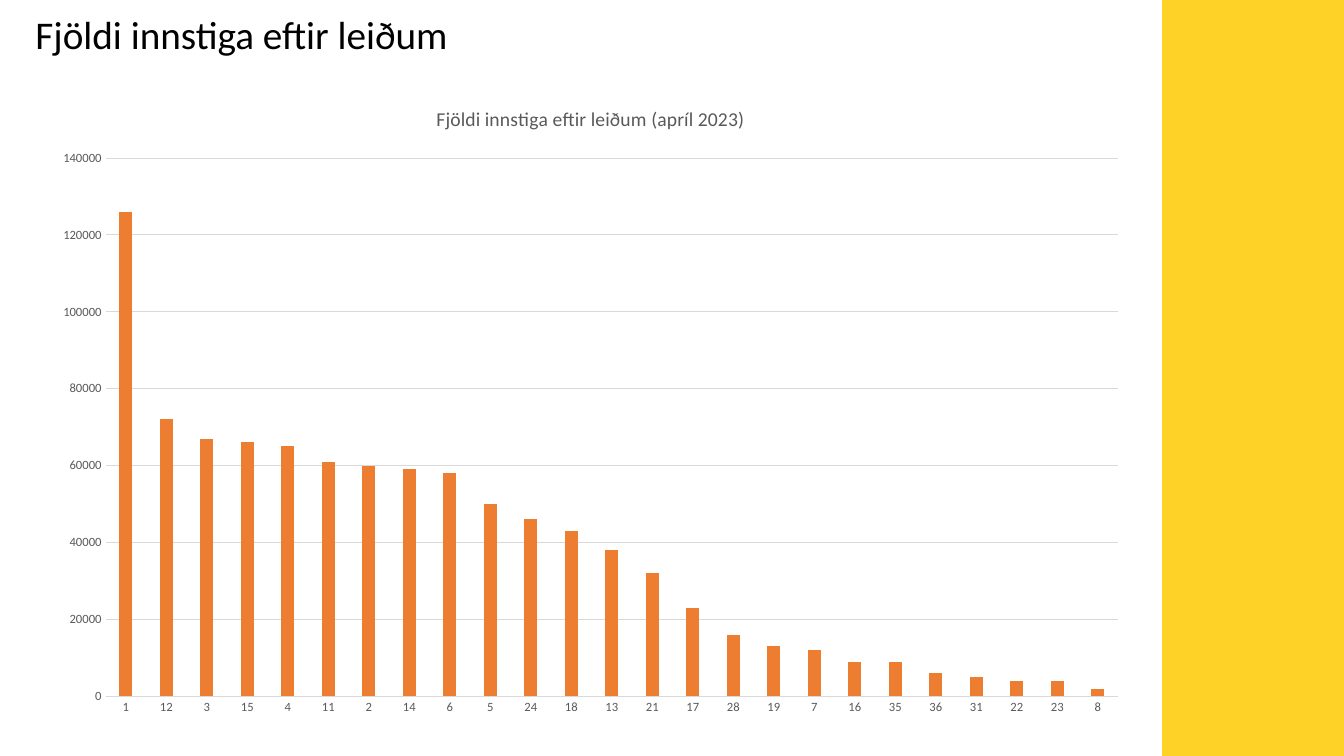
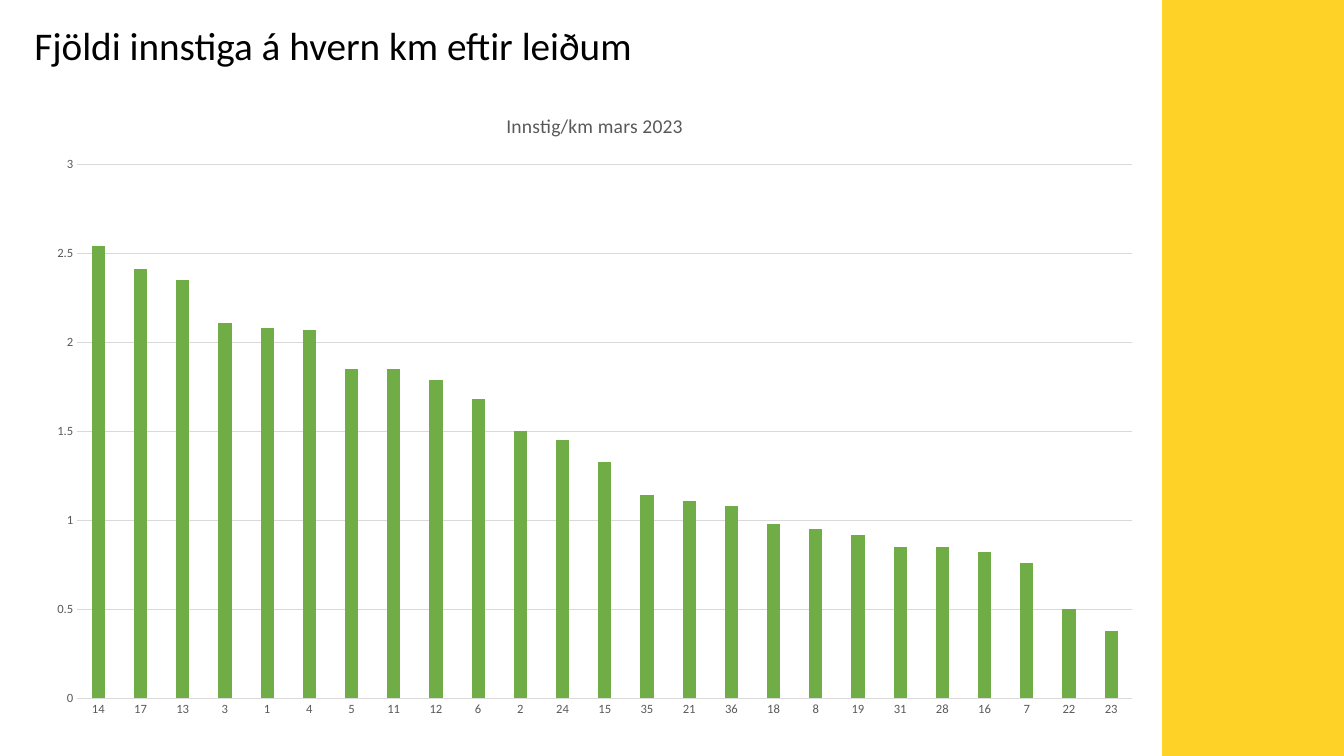
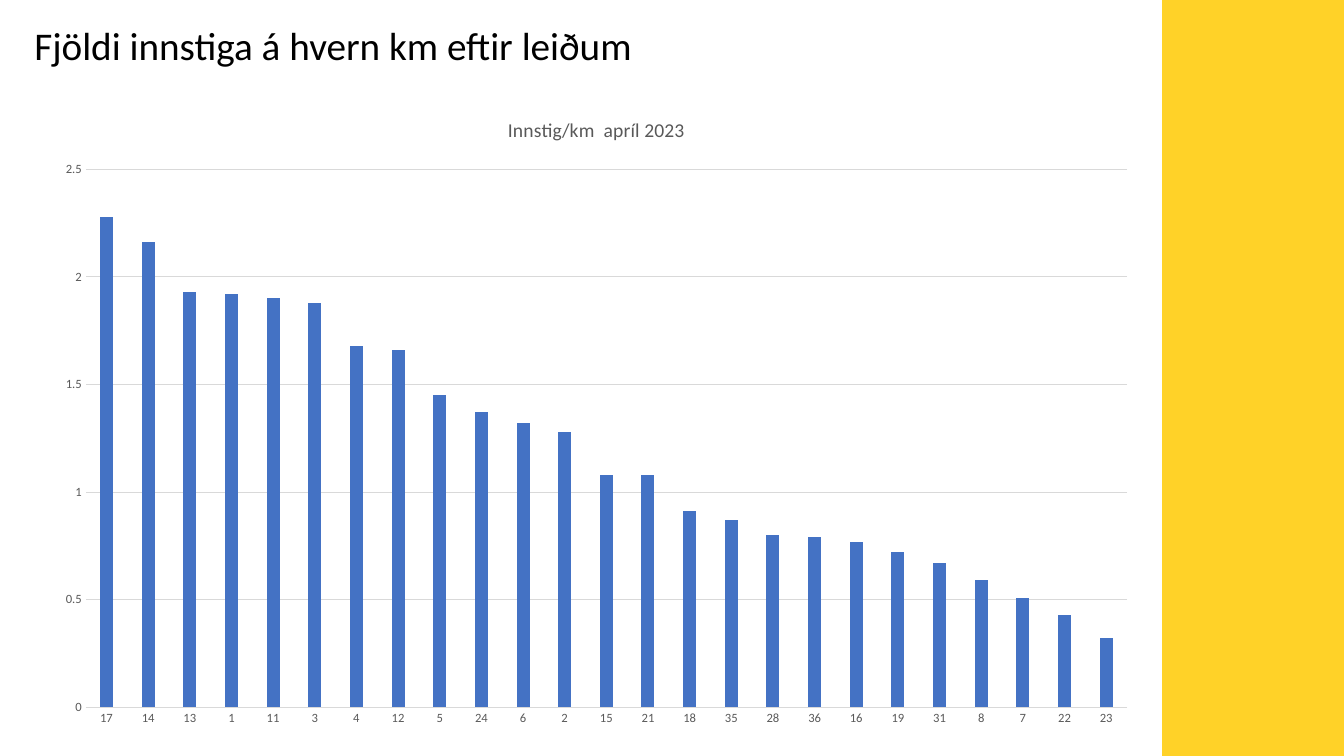
import pptx
import pptx.chart.data
import pptx.dml.color
import pptx.enum.chart
import pptx.enum.shapes
import pptx.enum.text
import pptx.util
from pptx.util import Cm, Pt

FONT = "Calibri"
BLACK, GREY, RULE = "000000", "595959", "D9D9D9"
YELLOW, ORANGE, GREEN, BLUE = "FFD228", "ED7D31", "70AD47", "4472C4"
PAGE_WIDTH, PAGE_HEIGHT = Cm(33.87), Cm(19.05)
BAND_WIDTH = Cm(4.58)
HEADING_SIZE = (Cm(27.28), Cm(1.45))

PAGES = [
    {
        "heading": "Fjöldi innstiga eftir leiðum",
        "heading_at": (Cm(0.64), Cm(0.13)),
        "caption": "Fjöldi innstiga eftir leiðum (apríl 2023)",
        "chart_box": (Cm(1.04), Cm(2.11), Cm(27.69), Cm(16.23)),
        "colour": ORANGE,
        "scale": (140000, 20000),
        "routes": [1, 12, 3, 15, 4, 11, 2, 14, 6, 5, 24, 18, 13, 21, 17, 28,
                   19, 7, 16, 35, 36, 31, 22, 23, 8],
        "values": [126000, 72000, 67000, 66000, 65000, 61000, 60000, 59000,
                   58000, 50000, 46000, 43000, 38000, 32000, 23000, 16000,
                   13000, 12000, 9000, 9000, 6000, 5000, 4000, 4000, 2000],
    },
    {
        "heading": "Fjöldi innstiga á hvern km eftir leiðum",
        "heading_at": (Cm(0.61), Cm(0.41)),
        "caption": "Innstig/km mars 2023",
        "chart_box": (Cm(0.88), Cm(2.27), Cm(28.22), Cm(16.12)),
        "colour": GREEN,
        "scale": (3, 0.5),
        "routes": [14, 17, 13, 3, 1, 4, 5, 11, 12, 6, 2, 24, 15, 35, 21, 36,
                   18, 8, 19, 31, 28, 16, 7, 22, 23],
        "values": [2.54, 2.41, 2.35, 2.11, 2.08, 2.07, 1.85, 1.85, 1.79,
                   1.68, 1.5, 1.45, 1.33, 1.14, 1.11, 1.08, 0.98, 0.95,
                   0.92, 0.85, 0.85, 0.82, 0.76, 0.5, 0.38],
    },
    {
        "heading": "Fjöldi innstiga á hvern km eftir leiðum",
        "heading_at": (Cm(0.61), Cm(0.41)),
        "caption": "Innstig/km  apríl 2023",
        "chart_box": (Cm(1.1), Cm(2.39), Cm(27.86), Cm(16.23)),
        "colour": BLUE,
        "scale": (2.5, 0.5),
        "routes": [17, 14, 13, 1, 11, 3, 4, 12, 5, 24, 6, 2, 15, 21, 18, 35,
                   28, 36, 16, 19, 31, 8, 7, 22, 23],
        "values": [2.28, 2.16, 1.93, 1.92, 1.9, 1.88, 1.68, 1.66, 1.45,
                   1.37, 1.32, 1.28, 1.08, 1.08, 0.91, 0.87, 0.8, 0.79,
                   0.77, 0.72, 0.67, 0.59, 0.51, 0.43, 0.32],
    },
]


def colour_of(hex_code):
    """Turn a hex string into a colour."""
    return pptx.dml.color.RGBColor.from_string(hex_code)


def style_font(font, size, hex_code):
    """Give a font the shared typeface with a size and colour."""
    font.name = FONT
    font.size = Pt(size)
    font.bold = False
    font.color.rgb = colour_of(hex_code)


def style_line(line, hex_code):
    """Draw a thin chart line in one colour."""
    line.width = Pt(0.75)
    line.color.rgb = colour_of(hex_code)


def add_side_band(page):
    """Draw the yellow band along the right edge of a page."""
    band = page.shapes.add_shape(
        pptx.enum.shapes.MSO_SHAPE.RECTANGLE,
        PAGE_WIDTH - BAND_WIDTH, 0, BAND_WIDTH, PAGE_HEIGHT)
    band.shadow.inherit = False
    band.fill.solid()
    band.fill.fore_color.rgb = colour_of(YELLOW)
    band.line.fill.background()


def set_heading(page, text, position):
    """Fill the title placeholder and move it to its position."""
    title = page.shapes.title
    title.left, title.top = position
    title.width, title.height = HEADING_SIZE
    frame = title.text_frame
    frame.text = text
    frame.word_wrap = True
    frame.auto_size = pptx.enum.text.MSO_AUTO_SIZE.NONE
    frame.vertical_anchor = pptx.enum.text.MSO_ANCHOR.MIDDLE
    para = frame.paragraphs[0]
    para.alignment = pptx.enum.text.PP_ALIGN.LEFT
    style_font(para.runs[0].font, 28, BLACK)


def style_axes(chart, maximum, step):
    """Format both axes and the gridlines of a column chart."""
    for axis in (chart.category_axis, chart.value_axis):
        axis.major_tick_mark = pptx.enum.chart.XL_TICK_MARK.NONE
        axis.minor_tick_mark = pptx.enum.chart.XL_TICK_MARK.NONE
        style_font(axis.tick_labels.font, 9, GREY)
    style_line(chart.category_axis.format.line, RULE)
    scale = chart.value_axis
    scale.format.line.fill.background()
    scale.minimum_scale = 0
    scale.maximum_scale = maximum
    scale.major_unit = step
    scale.has_major_gridlines = True
    style_line(scale.major_gridlines.format.line, RULE)


def add_route_chart(page, box, caption, routes, values, hex_code, scale):
    """Add a column chart of one value for each route."""
    data = pptx.chart.data.CategoryChartData()
    data.categories = [str(route) for route in routes]
    data.add_series("Series 1", values)
    chart = page.shapes.add_chart(
        pptx.enum.chart.XL_CHART_TYPE.COLUMN_CLUSTERED, *box, data).chart
    style_font(chart.font, 10, BLACK)
    chart.has_legend = False
    chart.has_title = True
    caption_frame = chart.chart_title.text_frame
    caption_frame.text = caption
    style_font(caption_frame.paragraphs[0].runs[0].font, 14, GREY)
    style_axes(chart, *scale)
    plot = chart.plots[0]
    plot.vary_by_categories = False
    plot.gap_width = 219
    plot.overlap = -27
    fill = plot.series[0].format.fill
    fill.solid()
    fill.fore_color.rgb = colour_of(hex_code)


def main():
    """Build the deck and save it."""
    deck = pptx.Presentation()
    deck.slide_width, deck.slide_height = PAGE_WIDTH, PAGE_HEIGHT
    layout = deck.slide_layouts.get_by_name("Title Only")
    for content in PAGES:
        page = deck.slides.add_slide(layout)
        add_side_band(page)
        set_heading(page, content["heading"], content["heading_at"])
        add_route_chart(
            page, content["chart_box"], content["caption"],
            content["routes"], content["values"], content["colour"],
            content["scale"])
    deck.save("out.pptx")


if __name__ == "__main__":
    main()
